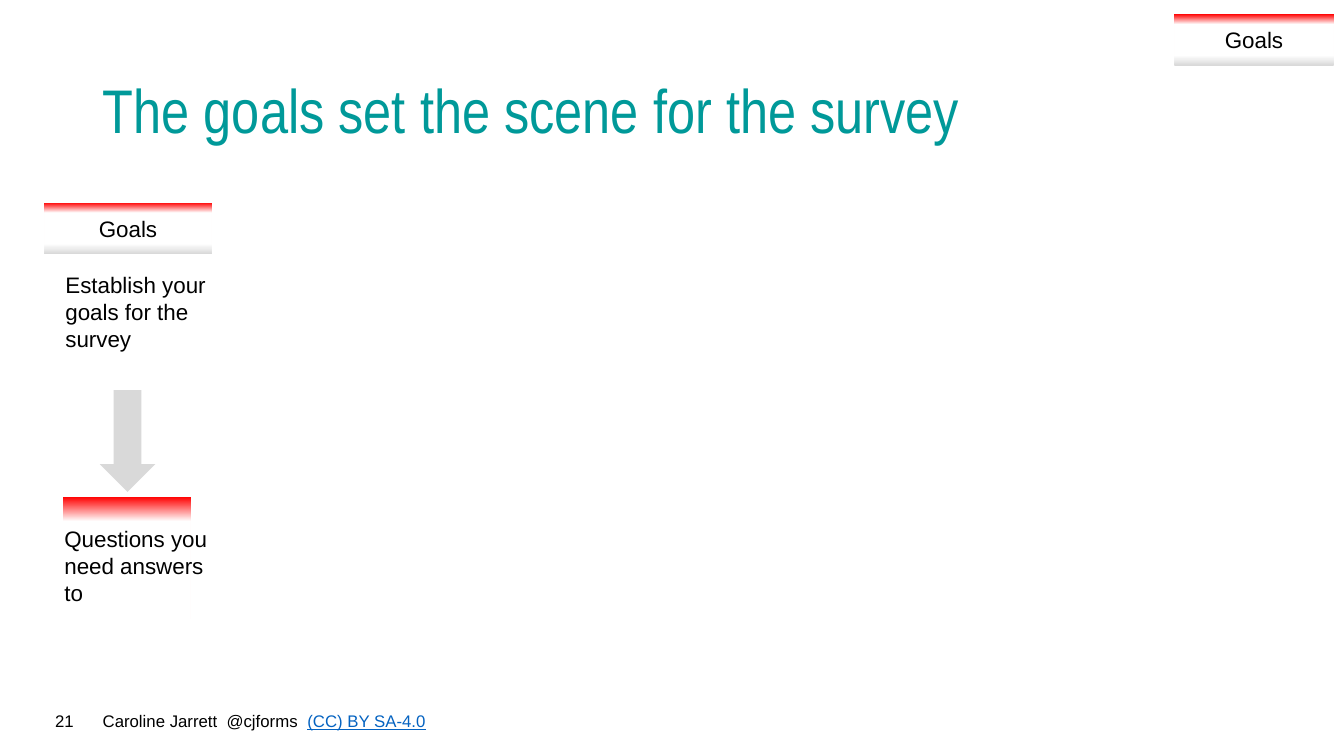
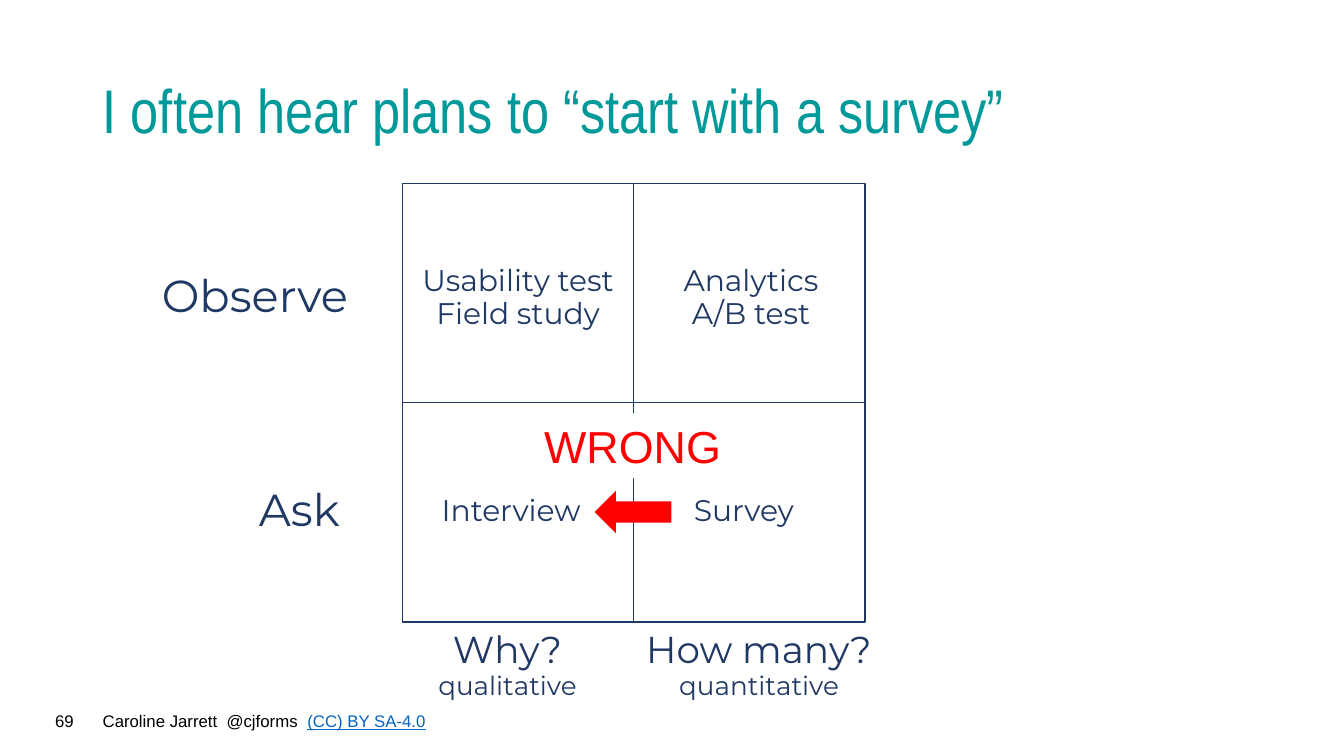
from copy import deepcopy

from pptx import Presentation
from pptx.dml.color import RGBColor
from pptx.enum.shapes import MSO_CONNECTOR, MSO_SHAPE as Shape
from pptx.enum.text import MSO_ANCHOR as Anchor, MSO_AUTO_SIZE as AutoSize, PP_ALIGN as Align
from pptx.oxml.ns import qn
from pptx.util import Inches, Pt

# Shared look
SLIDE_W, SLIDE_H = Inches(13.333), Inches(7.5)
TEAL = RGBColor(0x00, 0x99, 0x99)
NAVY = RGBColor(0x20, 0x38, 0x64)
RED = RGBColor(0xFF, 0x00, 0x00)
GREY = RGBColor(0xD9, 0xD9, 0xD9)
WHITE = RGBColor(0xFF, 0xFF, 0xFF)
BLACK = RGBColor(0x00, 0x00, 0x00)
LINK_BLUE = RGBColor(0x05, 0x63, 0xC1)
SANS, NARROW, ROUND = "Arial", "Arial Narrow", "Montserrat"
TITLE_AREA = (6.9, 5.33, 86.25, 19.33)
TAG_STOPS = [(0, RED), (0.2, WHITE), (0.8, WHITE), (1, GREY)]


def area(left, top, width, height):
    """Turn percentages of the slide into lengths."""
    return (int(SLIDE_W * left / 100), int(SLIDE_H * top / 100),
            int(SLIDE_W * width / 100), int(SLIDE_H * height / 100))


def add_run(paragraph, text, size, color=BLACK, font=SANS):
    run = paragraph.add_run()
    run.text = text
    run.font.size, run.font.name = Pt(size), font
    run.font.color.rgb = color
    return run


def add_text(slide, place, text, size, align=Align.LEFT):
    frame = slide.shapes.add_textbox(*area(*place)).text_frame
    frame.word_wrap = True
    paragraph = frame.paragraphs[0]
    paragraph.alignment = align
    add_run(paragraph, text, size)
    return paragraph


def add_block(slide, kind, place, fill=None):
    block = slide.shapes.add_shape(kind, *area(*place))
    block.shadow.inherit = False
    block.line.fill.background()
    if fill is None:
        block.fill.background()
    else:
        block.fill.solid()
        block.fill.fore_color.rgb = fill
    return block


def write_inside(block, text, size, color=BLACK):
    frame = block.text_frame
    frame.word_wrap = False
    frame.vertical_anchor = Anchor.MIDDLE
    frame.paragraphs[0].alignment = Align.CENTER
    add_run(frame.paragraphs[0], text, size, color)


def add_fade(slide, place, stops):
    """Rectangle with a top-to-bottom gradient."""
    fade = add_block(slide, Shape.RECTANGLE, place)
    fade.fill.gradient()
    fade.fill.gradient_angle = 270
    stop_list = fade.fill.gradient_stops
    stops_xml = next(fade._element.spPr.iter(qn("a:gsLst")))
    for _ in range(len(stops) - len(stop_list)):
        stops_xml.append(deepcopy(stops_xml[0]))
    for stop, (position, color) in zip(fade.fill.gradient_stops, stops):
        stop.position = position
        stop.color.rgb = color
    return fade


def add_tag(slide, place, text):
    write_inside(add_fade(slide, place, TAG_STOPS), text, 16)


def add_divider(slide, frame, begin_side, end_side):
    """Line between the middles of two sides of the frame."""
    divider = slide.shapes.add_connector(MSO_CONNECTOR.STRAIGHT, 0, 0, 0, 0)
    divider.begin_connect(frame, begin_side)
    divider.end_connect(frame, end_side)
    divider.line.color.rgb = NAVY
    divider.line.width = Pt(0.75)
    properties = divider._element.spPr
    properties.append(properties.makeelement(qn("a:effectLst"), {}))


def add_label(slide, center_x, center_y, lines):
    """Centred navy lines of (text, size) around a point."""
    width, height = 18.75, 10
    place = (center_x - width / 2, center_y - height / 2, width, height)
    frame = slide.shapes.add_textbox(*area(*place)).text_frame
    frame.word_wrap = True
    frame.vertical_anchor = Anchor.MIDDLE
    frame.margin_left = frame.margin_right = 0
    for index, (text, size) in enumerate(lines):
        paragraph = frame.add_paragraph() if index else frame.paragraphs[0]
        paragraph.alignment = Align.CENTER
        paragraph.line_spacing = 0.9
        paragraph.space_before = Pt(1 if index else 0)
        add_run(paragraph, text, size, NAVY, ROUND)


def start_slide(deck, title, number):
    """New slide with its title, number and footer."""
    slide = deck.slides.add_slide(deck.slide_layouts[5])
    heading = slide.shapes.title
    heading.left, heading.top, heading.width, heading.height = area(*TITLE_AREA)
    heading.text_frame.auto_size = AutoSize.NONE
    heading.text_frame.vertical_anchor = Anchor.MIDDLE
    paragraph = heading.text_frame.paragraphs[0]
    paragraph.alignment = Align.LEFT
    paragraph.line_spacing = 0.9
    add_run(paragraph, title, 44, TEAL, NARROW)

    add_text(slide, (0, 93.33, 6.23, 4), number, 12, Align.RIGHT)
    footer = add_text(slide, (6.9, 93.33, 42.8, 4), "Caroline Jarrett  @cjforms  ", 12)
    add_run(footer, "(CC) BY SA-4.0", 12, LINK_BLUE).font.underline = True
    return slide


def build_goals(deck):
    slide = start_slide(deck, "The goals set the scene for the survey", "21")
    # Step from goals to questions
    add_tag(slide, (3.3, 26.8, 12.45, 6.8), "Goals")
    add_text(slide, (4.13, 35.2, 12.23, 12.13), "Establish your goals for the survey", 16)
    add_block(slide, Shape.DOWN_ARROW, (7.43, 51.6, 4.13, 13.47), GREY)
    add_fade(slide, (4.65, 65.73, 9.53, 16.13), [(0, RED), (0.2, WHITE)])
    add_text(slide, (4.05, 68.8, 12.23, 12.13), "Questions you need answers to", 16)
    # Section tag in the corner
    add_tag(slide, (87.38, 1.87, 11.85, 6.8), "Goals")


def build_matrix(deck):
    slide = start_slide(deck, "I often hear plans to “start with a survey”", "69")
    # Two-by-two frame
    frame = add_block(slide, Shape.RECTANGLE, (29.93, 24.27, 34.43, 58))
    frame.line.color.rgb = NAVY
    frame.line.width = Pt(1)
    add_divider(slide, frame, 0, 2)
    add_divider(slide, frame, 3, 1)

    # Row names, methods and column names
    observe, ask, axis = 39.47, 67.73, 88.07
    labels = [
        (18.98, observe, [("Observe", 32)]),
        (38.55, observe, [("Usability test", 21.3), ("Field study", 21.3)]),
        (55.88, observe, [("Analytics", 21.3), ("A/B test", 21.3)]),
        (22.28, ask, [("Ask", 32)]),
        (38.03, ask, [("Interview", 21.3)]),
        (55.35, ask, [("Survey", 21.3)]),
        (37.76, axis, [("Why?", 26.7), ("qualitative", 18.7)]),
        (56.48, axis, [("How many?", 26.7), ("quantitative", 18.7)]),
    ]
    for label in labels:
        add_label(slide, *label)

    # Verdict
    add_block(slide, Shape.LEFT_ARROW, (44.25, 64.93, 5.7, 5.6), RED)
    verdict = add_block(slide, Shape.RECTANGLE, (39.68, 54.67, 14.78, 8.53), WHITE)
    write_inside(verdict, "WRONG", 32, RED)


def main():
    deck = Presentation()
    deck.slide_width, deck.slide_height = SLIDE_W, SLIDE_H
    build_goals(deck)
    build_matrix(deck)
    deck.save("out.pptx")


if __name__ == "__main__":
    main()
